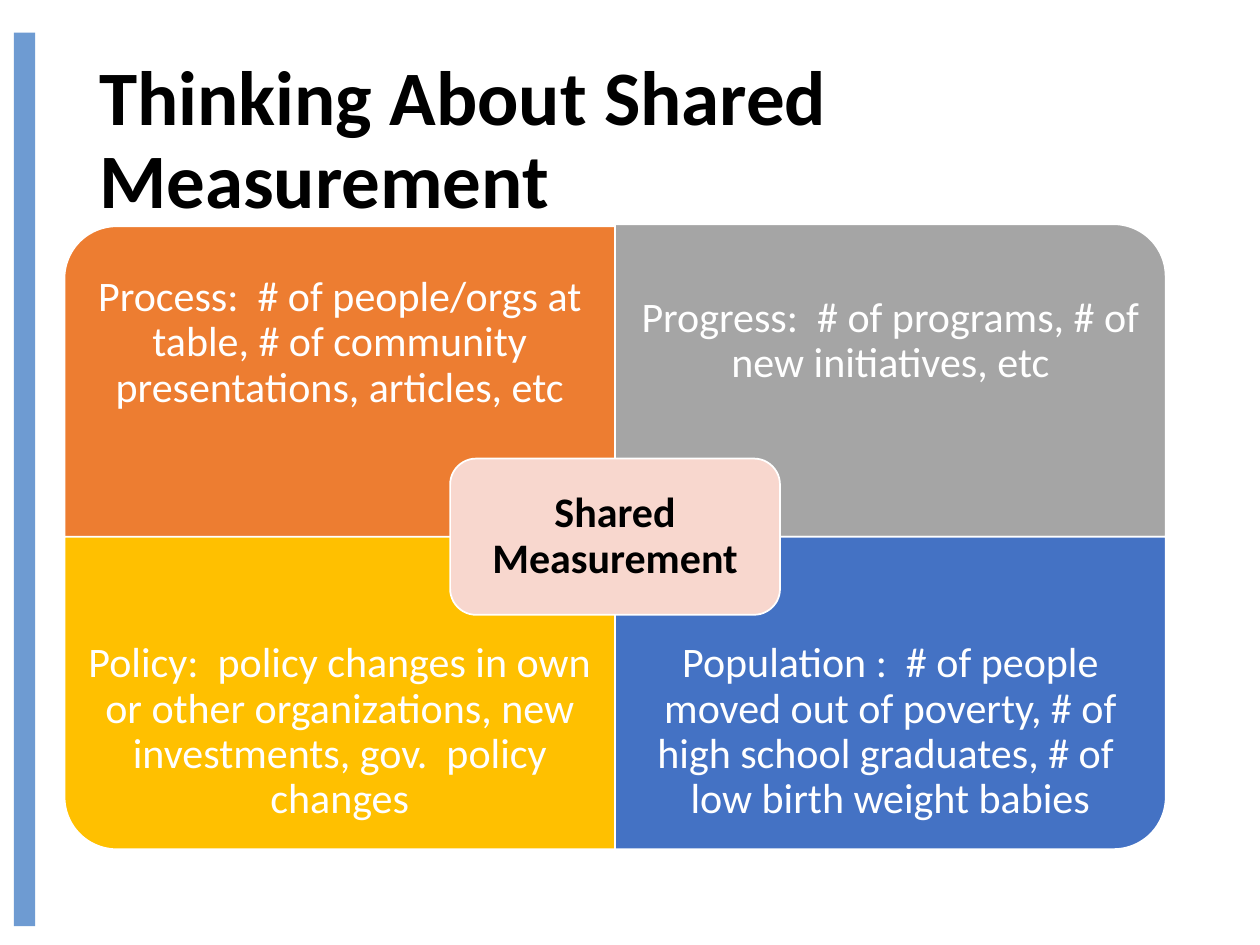
from pptx import Presentation
from pptx.dml.color import RGBColor
from pptx.enum.shapes import MSO_SHAPE
from pptx.enum.text import MSO_ANCHOR, PP_ALIGN
from pptx.util import Cm, Pt

CENTER_X, CENTER_Y = 12.4, 10.82
TILE_WIDTH, TILE_HEIGHT = 11.1, 6.3
LABEL_HEIGHT = 4.72
HUB_WIDTH, HUB_HEIGHT = 6.65, 3.15
HUB_INSET = 0.15

# text, fill, column, row, rotation that turns the round corner outwards
QUADRANTS = [
    ("Process:  # of people/orgs at table, # of community presentations, articles, etc",
     "ED7D31", 0, 0, 270),
    ("Progress:  # of programs, # of new initiatives, etc", "A5A5A5", 1, 0, 0),
    ("Policy:  policy changes in own or other organizations, new investments, gov.  policy changes",
     "FFC000", 0, 1, 180),
    ("Population :  # of people moved out of poverty, # of high school graduates, # of  low birth weight babies",
     "4472C4", 1, 1, 90),
]


def color(value):
    return RGBColor.from_string(value)


def set_all(target, values):
    for name, value in values.items():
        setattr(target, name, value)


def add_block(page, kind, left, top, width, height, fill, outline=None):
    block = page.shapes.add_shape(kind, Cm(left), Cm(top), Cm(width), Cm(height))
    block.shadow.inherit = False
    block.fill.solid()
    block.fill.fore_color.rgb = color(fill)
    if outline:
        block.line.color.rgb = color(outline)
        block.line.width = Pt(1)
    else:
        block.line.fill.background()
    return block


def add_text(page, text, left, top, width, height, ink, size=24, bold=False,
             align=PP_ALIGN.CENTER, inset_x=0.25, inset_y=0.25):
    box = page.shapes.add_textbox(Cm(left), Cm(top), Cm(width), Cm(height))
    set_all(box.text_frame, {
        "word_wrap": True, "vertical_anchor": MSO_ANCHOR.MIDDLE,
        "margin_left": Cm(inset_x), "margin_right": Cm(inset_x),
        "margin_top": Cm(inset_y), "margin_bottom": Cm(inset_y),
    })
    para = box.text_frame.paragraphs[0]
    set_all(para, {"alignment": align, "line_spacing": 0.9})
    span = para.add_run()
    span.text = text
    set_all(span.font, {"name": "Calibri", "size": Pt(size), "bold": bold})
    span.font.color.rgb = color(ink)


def add_quadrant(page, text, fill, column, row, rotation):
    left = CENTER_X + (column - 1) * TILE_WIDTH
    top = CENTER_Y + (row - 1) * TILE_HEIGHT
    sideways = rotation % 180 == 90
    width, height = (TILE_HEIGHT, TILE_WIDTH) if sideways else (TILE_WIDTH, TILE_HEIGHT)
    # Sideways tiles sit slightly lower than upright ones
    shift = 0.04 if sideways and row == 0 else 0
    tile = add_block(page, MSO_SHAPE.ROUND_1_RECTANGLE,
                     left + (TILE_WIDTH - width) / 2,
                     top + shift + (TILE_HEIGHT - height) / 2,
                     width, height, fill, "FFFFFF")
    tile.rotation = rotation
    label_top = top + shift + row * (TILE_HEIGHT - LABEL_HEIGHT)
    add_text(page, text, left, label_top, TILE_WIDTH, LABEL_HEIGHT, "FFFFFF",
             inset_x=0.48, inset_y=0.48)


def add_hub(page, text):
    left, top = CENTER_X - HUB_WIDTH / 2, CENTER_Y - HUB_HEIGHT / 2
    add_block(page, MSO_SHAPE.ROUNDED_RECTANGLE, left, top, HUB_WIDTH, HUB_HEIGHT,
              "F8D7CE", "FFFFFF")
    add_text(page, text, left + HUB_INSET, top + HUB_INSET, HUB_WIDTH - 2 * HUB_INSET,
             HUB_HEIGHT - 2 * HUB_INSET, "000000", bold=True)


def main():
    deck = Presentation()
    set_all(deck, {"slide_width": Cm(25.4), "slide_height": Cm(19.05)})
    page = deck.slides.add_slide(deck.slide_layouts[6])
    add_block(page, MSO_SHAPE.RECTANGLE, 0.28, 0.66, 0.43, 18.01, "6E9BD2")
    add_text(page, "Thinking About Shared Measurement", 1.75, 1.02, 21.9, 3.68, "000000",
             size=44, bold=True, align=PP_ALIGN.LEFT, inset_y=0.13)
    for quadrant in QUADRANTS:
        add_quadrant(page, *quadrant)
    add_hub(page, "Shared Measurement")
    deck.save("out.pptx")


if __name__ == "__main__":
    main()
